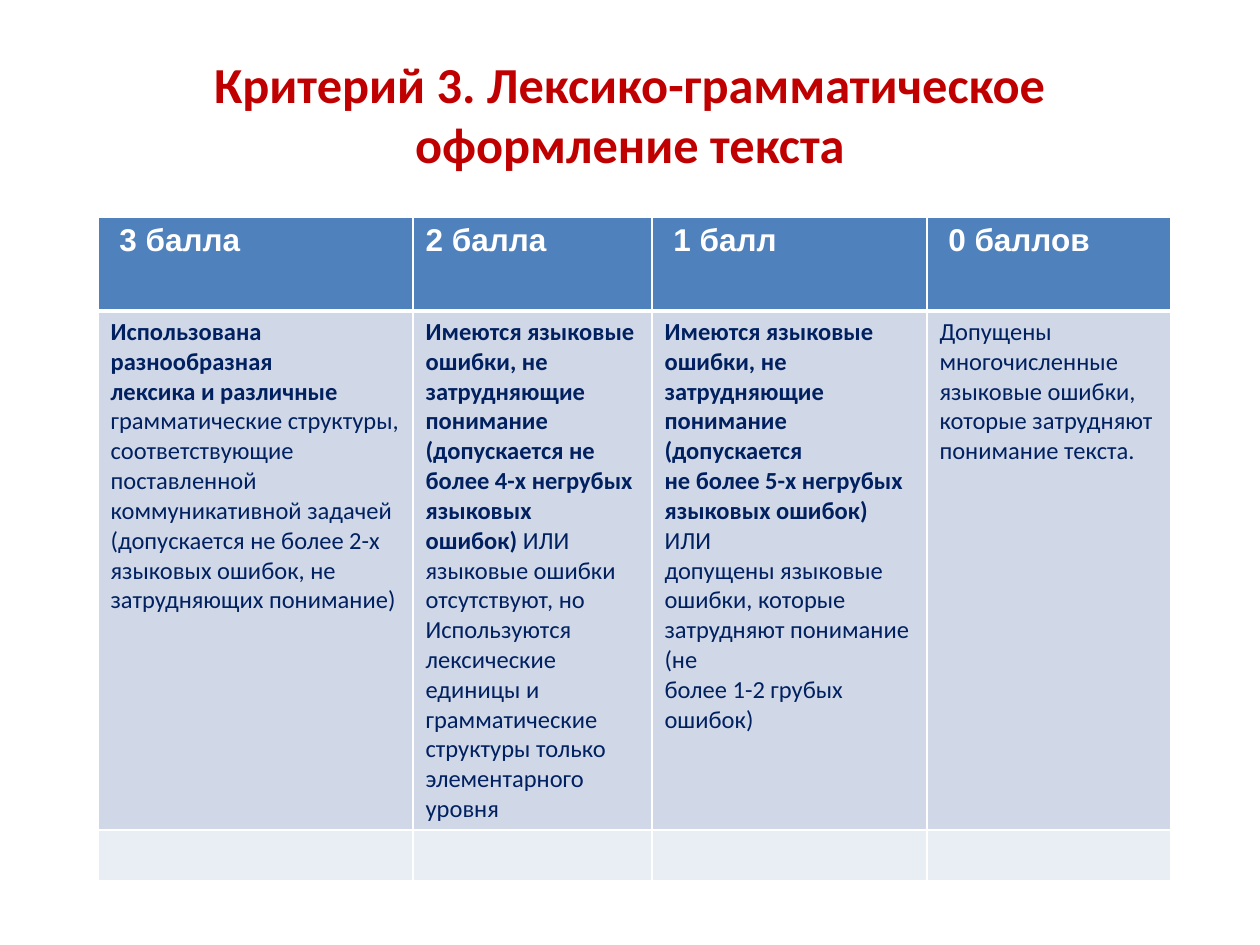
from lxml import etree
from pptx import Presentation
from pptx import util as u
from pptx.dml.color import RGBColor
from pptx.enum import text
from pptx.oxml.ns import qn

C = {"title": "C00000", "header": "4F81BD", "body": "D0D8E8",
     "last": "E9EDF4", "ink": "002060", "white": "FFFFFF"}
COLS = [315, 239, 275, 244]
ROWS = [94, 519, 51]
HEADERS = [" 3 балла", "2 балла", " 1 балл", " 0 баллов"]
# In each list, text before "|" is bold and everything after it is regular.
CRITERIA = [
    ["Использована разнообразная",
     "лексика и различные",
     "|грамматические структуры,",
     "соответствующие поставленной коммуникативной задачей",
     "(допускается не более 2-х",
     "языковых ошибок, не затрудняющих понимание)"],
    ["Имеются языковые",
     "ошибки, не затрудняющие понимание",
     "(допускается не более 4-х негрубых языковых",
     "ошибок) |ИЛИ",
     "языковые ошибки",
     "отсутствуют, но",
     "Используются",
     "лексические единицы и грамматические",
     "структуры только",
     "элементарного уровня"],
    ["Имеются языковые ошибки, не затрудняющие",
     "понимание (допускается",
     "не более 5-х негрубых",
     "языковых ошибок) |ИЛИ",
     "допущены языковые",
     "ошибки, которые затрудняют понимание (не",
     "более 1-2 грубых ошибок)"],
    ["|Допущены",
     "многочисленные языковые ошибки,",
     "которые затрудняют",
     "понимание текста."],
]


def px(n):
    return u.Emu(round(n * 914400 / 126))


def style(r, name, size, color, bold):
    r.font.name, r.font.size, r.font.bold = name, u.Pt(size), bold
    r.font.color.rgb = RGBColor.from_string(C[color])


prs = Presentation()
prs.slide_width, prs.slide_height = px(1260), px(945)
s = prs.slides.add_slide(prs.slide_layouts[6])

title = s.shapes.add_textbox(px(63), px(49), px(1134), px(129))
tf = title.text_frame
tf.word_wrap = True
tf.vertical_anchor = text.MSO_ANCHOR.MIDDLE
tf.text = "Критерий 3. Лексико-грамматическое оформление текста"
p = tf.paragraphs[0]
p.alignment = text.PP_ALIGN.CENTER
style(p.runs[0], "Calibri", 28.8, "title", True)

table = s.shapes.add_table(len(ROWS), len(COLS), px(98), px(217),
                           px(sum(COLS)), px(sum(ROWS))).table
for col, width in zip(table.columns, COLS):
    col.width = px(width)
for row, height in zip(table.rows, ROWS):
    row.height = px(height)

for i, fill in enumerate(["header", "body", "last"]):
    for cell in table.rows[i].cells:
        tcPr = cell._tc.get_or_add_tcPr()
        for side in "LRTB":
            thick = (i, side) in [(0, "B"), (1, "T")]
            ln = etree.SubElement(tcPr, qn(f"a:ln{side}"), w=str(u.Pt(3 if thick else 1)))
            solid = etree.SubElement(ln, qn("a:solidFill"))
            etree.SubElement(solid, qn("a:srgbClr"), val=C["white"])
        cell.fill.solid()
        cell.fill.fore_color.rgb = RGBColor.from_string(C[fill])

for j, (header, lines) in enumerate(zip(HEADERS, CRITERIA)):
    cell = table.cell(0, j)
    cell.text_frame.text = header
    style(cell.text_frame.paragraphs[0].runs[0], "Arial", 18, "white", True)

    tf = table.cell(1, j).text_frame
    bold = True
    for k, line in enumerate(lines):
        p = tf.add_paragraph() if k else tf.paragraphs[0]
        for n, part in enumerate(line.split("|")):
            bold = bold and n == 0
            if part:
                r = p.add_run()
                r.text = part
                style(r, "Calibri", 14, "ink", bold)

prs.save("out.pptx")
